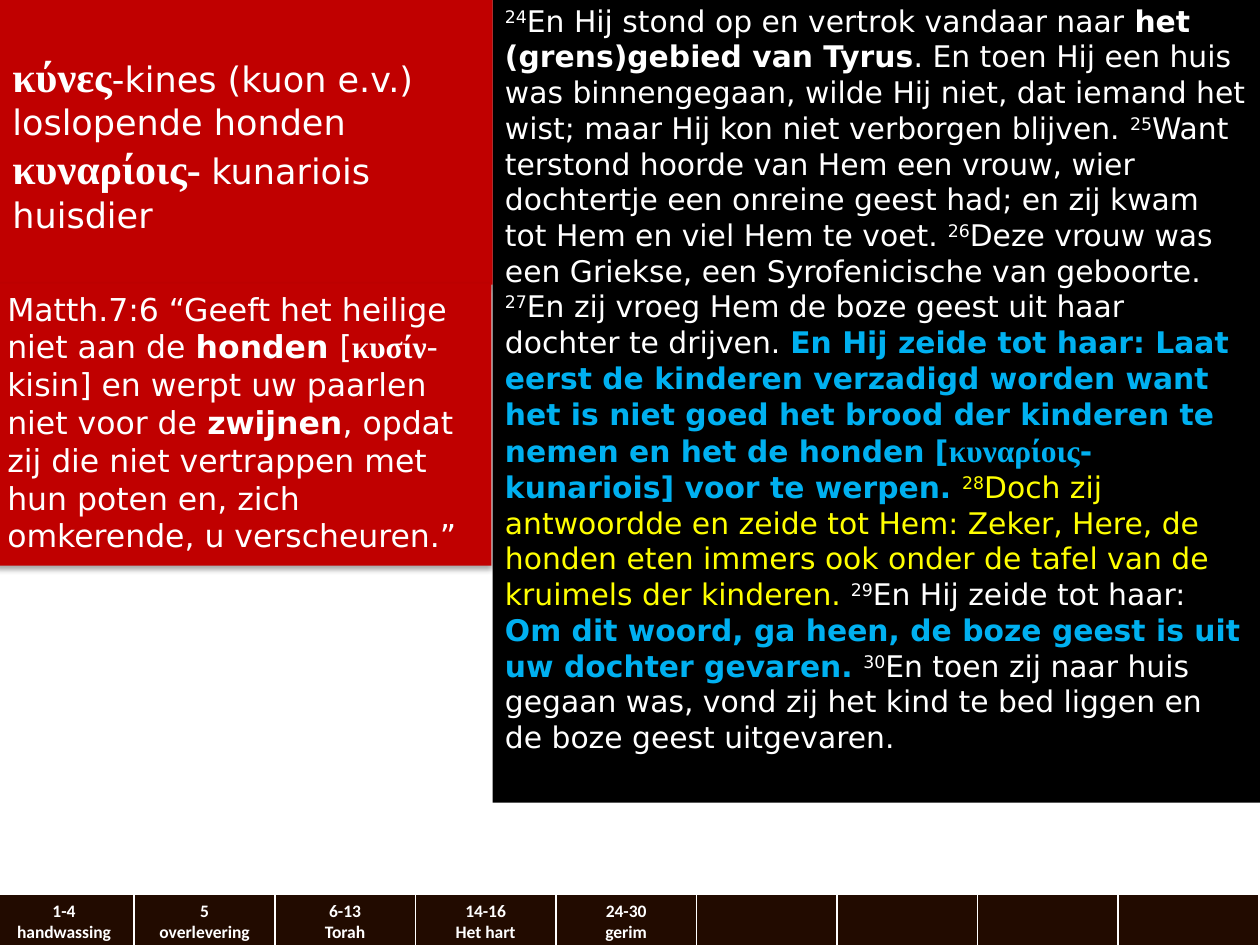
import dataclasses
import pptx
import pptx.dml.color
import pptx.enum.text
import pptx.oxml
import pptx.oxml.ns
import pptx.util
from pptx.util import Inches


@dataclasses.dataclass(frozen=True)
class Theme:
    sans: str = "DejaVu Sans"
    greek: str = "Times New Roman"
    label: str = "Calibri"
    white: str = "FFFFFF"
    black: str = "000000"
    red: str = "C00000"
    blue: str = "00B0F0"
    yellow: str = "FFFF00"
    brown: str = "220B00"
    verse: int = 17
    quote: int = 18
    word: int = 20
    large: int = 24
    small: int = 10


@dataclasses.dataclass(frozen=True)
class Style:
    size: int
    color: str = "FFFFFF"
    bold: bool = False
    face: str = "DejaVu Sans"
    sup: bool = False


T = Theme()
PLAIN = Style(T.verse)
BOLD = Style(T.verse, bold=True)
SUP = Style(T.verse, sup=True)
LORD = Style(T.verse, T.blue, True)
LORD_GREEK = Style(T.quote, T.blue, True, T.greek)
WOMAN = Style(T.verse, T.yellow)
WOMAN_SUP = Style(T.verse, T.yellow, sup=True)
WORD = Style(T.word)
WORD_GREEK = Style(T.large, bold=True, face=T.greek)
QUOTE = Style(T.quote)
QUOTE_BOLD = Style(T.quote, bold=True)
QUOTE_GREEK = Style(T.quote, bold=True, face=T.greek)
LABEL = Style(T.small, bold=True, face=T.label)

# Each paragraph is a list of (text, style) runs
PASSAGE = [[
    ("24", SUP),
    ("En Hij stond op en vertrok vandaar naar ", PLAIN),
    ("het (grens)gebied van Tyrus", BOLD),
    (". En toen Hij een huis was binnengegaan, wilde Hij niet, dat iemand "
     "het wist; maar Hij kon niet verborgen blijven. ", PLAIN),
    ("25", SUP),
    ("Want terstond hoorde van Hem een vrouw, wier dochtertje een onreine "
     "geest had; en zij kwam tot Hem en viel Hem te voet. ", PLAIN),
    ("26", SUP),
    ("Deze vrouw was een Griekse, een Syrofenicische van geboorte. ", PLAIN),
    ("27", SUP),
    ("En zij vroeg Hem de boze geest uit haar dochter te drijven. ", PLAIN),
    ("En Hij zeide tot haar: Laat eerst de kinderen verzadigd worden want "
     "het is niet goed het brood der kinderen te nemen en het de honden [",
     LORD),
    ("κυναρίοις", LORD_GREEK),
    ("-kunariois] voor te werpen. ", LORD),
    ("28", WOMAN_SUP),
    ("Doch zij antwoordde en zeide tot Hem: Zeker, Here, de honden eten "
     "immers ook onder de tafel van de kruimels der kinderen. ", WOMAN),
    ("29", SUP),
    ("En Hij zeide tot haar: ", PLAIN),
    ("Om dit woord, ga heen, de boze geest is uit uw dochter gevaren. ", LORD),
    ("30", SUP),
    ("En toen zij naar huis gegaan was, vond zij het kind te bed liggen en "
     "de boze geest uitgevaren.", PLAIN),
]]
WORDS = [
    [("κύνες", WORD_GREEK), ("-kines (kuon e.v.)", WORD)],
    [("loslopende honden", WORD)],
    [("κυναρίοις- ", WORD_GREEK), ("kunariois", WORD)],
    [("huisdier", WORD)],
]
MATTHEW = [[
    ("Matth.7:6 “Geeft het heilige niet aan de ", QUOTE),
    ("honden ", QUOTE_BOLD),
    ("[", QUOTE),
    ("κυσίν", QUOTE_GREEK),
    ("-kisin] en werpt uw paarlen niet voor de ", QUOTE),
    ("zwijnen", QUOTE_BOLD),
    (", opdat zij die niet vertrappen met hun poten en, zich omkerende, "
     "u verscheuren.”", QUOTE),
]]
PARTS = ["1-4\nhandwassing", "5\noverlevering", "6-13\nTorah",
         "14-16\nHet hart", "24-30\ngerim", "", "", "", ""]


def rgb(code):
    return pptx.dml.color.RGBColor.from_string(code)


def xml(text):
    return pptx.oxml.parse_xml(
        text.replace(" ", " " + pptx.oxml.ns.nsdecls("a") + " ", 1))


def format_font(font, style):
    font.name = style.face
    font.size = pptx.util.Pt(style.size)
    font.bold = style.bold
    font.color.rgb = rgb(style.color)


def add_shadow(shape):
    shape.element.spPr.append(xml(
        '<a:effectLst ><a:outerShdw blurRad="39370" dist="22860" '
        'dir="5400000" rotWithShape="0"><a:srgbClr val="000000">'
        '<a:alpha val="35000"/></a:srgbClr></a:outerShdw></a:effectLst>'))


def add_panel(slide, box, fill, paras, top=0.05, shadow=False):
    panel = slide.shapes.add_textbox(*map(Inches, box))
    panel.fill.solid()
    panel.fill.fore_color.rgb = rgb(fill)
    if shadow:
        add_shadow(panel)
    frame = panel.text_frame
    frame.word_wrap = True
    frame.margin_top = Inches(top)
    for i, runs in enumerate(paras):
        para = frame.add_paragraph() if i else frame.paragraphs[0]
        if len(runs) == 1:
            format_font(para.font, runs[0][1])
        for text, style in runs:
            run = para.add_run()
            run.text = text
            if len(runs) > 1:
                format_font(run.font, style)
            if style.sup:
                run.font._element.set("baseline", "30000")


def add_borders(cell):
    props = cell._tc.get_or_add_tcPr()
    for side, width in (("L", 1), ("R", 1), ("T", 1), ("B", 3)):
        props.append(xml(
            f'<a:ln{side} w="{width * 12700}"><a:solidFill>'
            f'<a:srgbClr val="{T.white}"/></a:solidFill></a:ln{side}>'))


def add_index(slide, box, labels):
    table = slide.shapes.add_table(
        1, len(labels), *map(Inches, box)).table
    table.first_row = table.horz_banding = False
    for col, label in enumerate(labels):
        table.columns[col].width = Inches(box[2] / len(labels))
        cell = table.cell(0, col)
        add_borders(cell)
        cell.fill.solid()
        cell.fill.fore_color.rgb = rgb(T.brown)
        cell.text = label
        for para in cell.text_frame.paragraphs:
            para.alignment = pptx.enum.text.PP_ALIGN.CENTER
            format_font(para.font, LABEL)


def main():
    deck = pptx.Presentation()
    deck.slide_width, deck.slide_height = Inches(10), Inches(7.5)
    slide = deck.slides.add_slide(deck.slide_layouts[6])

    # Bible passage on the right
    add_panel(slide, (3.91, -0.03, 6.1, 6.4), T.black, PASSAGE)
    # Chapter index along the bottom
    add_index(slide, (-0.05, 7.1, 10.04, 0.43), PARTS)
    # Greek words and the quote on the left
    add_panel(slide, (0, -0.06, 3.91, 2.32), T.red, WORDS, 0.46, True)
    add_panel(slide, (-0.04, 2.25, 3.94, 2.24), T.red, MATTHEW, shadow=True)

    deck.save("out.pptx")


if __name__ == "__main__":
    main()
